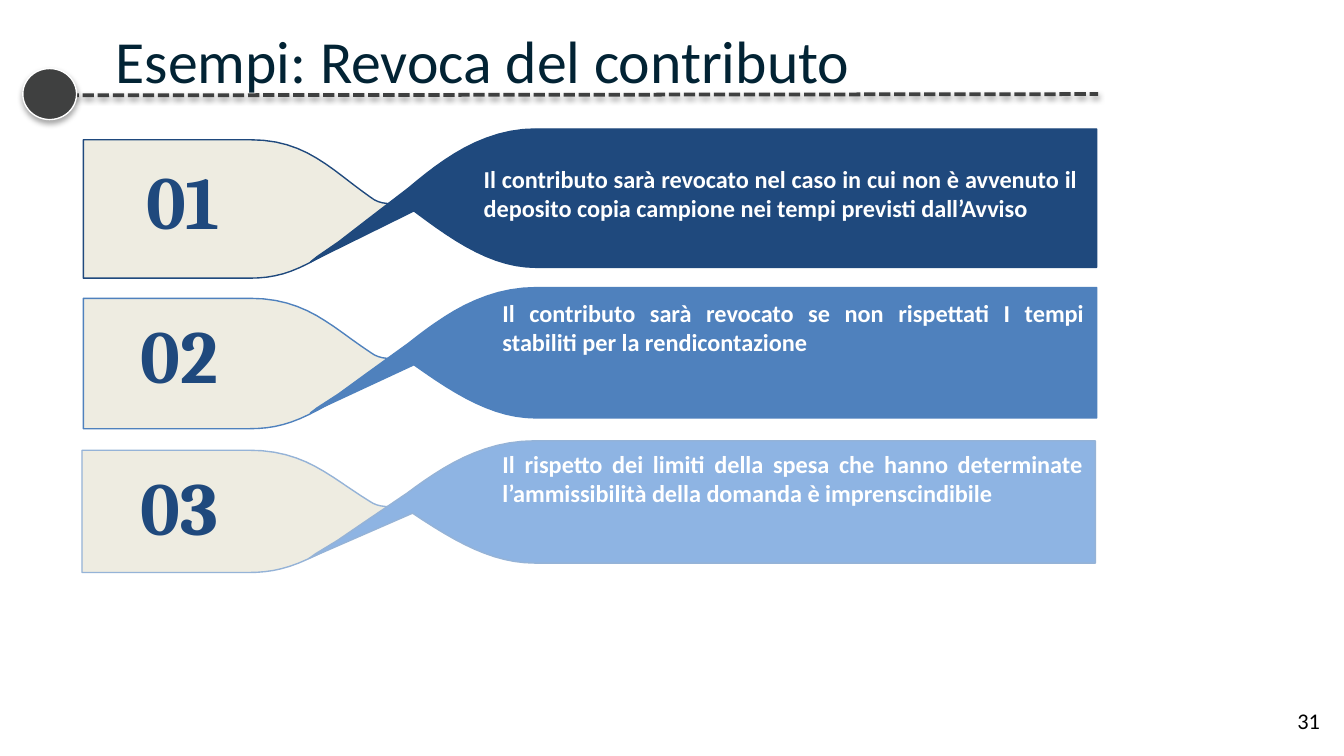
from lxml.etree import SubElement
from pptx import Presentation
from pptx.dml.color import RGBColor
from pptx.enum.dml import MSO_LINE
from pptx.enum.shapes import MSO_CONNECTOR, MSO_SHAPE
from pptx.enum.text import MSO_ANCHOR, MSO_AUTO_SIZE, PP_ALIGN
from pptx.oxml.ns import qn
from pptx.util import Pt

PX = 9144  # EMU per px, 100 px to the inch
COLORS = {
    "title": "022334", "rule": "3F4040", "white": "FFFFFF", "black": "000000",
    "cream": "EEECE1", "navy": "1F497D", "blue": "4F81BD",
    "sky": "8EB4E3", "sky_line": "95B3D7",
}


def curve(start, pull_start, pull_end, end, steps=12):
    """Return points along a cubic Bezier curve."""
    points = []
    for step in range(steps + 1):
        t = step / steps
        weights = ((1 - t) ** 3, 3 * t * (1 - t) ** 2, 3 * t * t * (1 - t), t ** 3)
        corners = (start, pull_start, pull_end, end)
        points.append(tuple(sum(w * corner[axis] for w, corner in zip(weights, corners))
                            for axis in (0, 1)))
    return points


# Ribbon outlines in px, drawn for a ribbon of OUTLINE_HEIGHT
OUTLINE_HEIGHT = 103
BAND_LEFT = 169
TAIL = [
    (0, 0),
    *curve((124, 0), (166, 0), (184, 22), (214, 43)),
    *curve((214, 43), (224, 51), (241, 48), (251, 36)),
    *curve((211, 64), (168, 95), (150, 103), (124, 103)),
    (0, 103),
]
BAND = [
    *curve((168, 0), (128, 0), (98, 23), (73, 44)),
    (43, 67), (21, 84), (5, 95), (0, 99),
    *curve((77, 61), (110, 86), (137, 103), (168, 103)),
    (585, 103), (585, 0),
]

# Row box (left, top, height), tail drop, colours, number box and text box
# (left, top, width, height inside the row), wording
ROWS = [
    ((62, 96, 103), 8, "navy", "navy", "01", (37, 14, 143, 77), (288, 21, 461, 54),
     "Il contributo sarà revocato nel caso in cui non è avvenuto il deposito "
     "copia campione nei tempi previsti dall’Avviso"),
    ((62, 214, 97), 8, "blue", "blue", "02", (33, 11, 152, 77), (302, 3, 452, 54),
     "Il contributo sarà revocato se non rispettati I tempi stabiliti per la "
     "rendicontazione"),
    ((61, 328, 91), 7, "sky", "sky_line", "03", (34, 10, 127, 77), (303, 1, 451, 54),
     "Il rispetto dei limiti della spesa che hanno determinate l’ammissibilità "
     "della domanda è imprenscindibile"),
]


def rgb(name):
    return RGBColor.from_string(COLORS[name])


def emu(*lengths):
    return [length * PX for length in lengths]


def add_shadow(shape, distance, opacity):
    """Give the shape a soft shadow that falls straight down."""
    properties = shape._element.spPr
    for old in properties.findall(qn("a:effectLst")):
        properties.remove(old)
    effects = SubElement(properties, qn("a:effectLst"))
    shadow = SubElement(effects, qn("a:outerShdw"), blurRad=str(Pt(3.1)),
                        dist=str(Pt(distance)), dir="5400000", rotWithShape="0")
    color = SubElement(shadow, qn("a:srgbClr"), val=COLORS["black"])
    SubElement(color, qn("a:alpha"), val=str(opacity * 1000))


def write(frame, text, size, color, font="Calibri", bold=False,
          align=PP_ALIGN.LEFT, anchor=MSO_ANCHOR.TOP, space_after=0):
    frame.word_wrap = True
    frame.auto_size = MSO_AUTO_SIZE.NONE
    frame.vertical_anchor = anchor
    para = frame.paragraphs[0]
    para.alignment = align
    para.space_after = Pt(space_after)
    span = para.add_run()
    span.text = text
    span.font.name = font
    span.font.size = Pt(size)
    span.font.bold = bold
    span.font.color.rgb = rgb(color)


def add_text(page, box, *args, **style):
    write(page.shapes.add_textbox(*emu(*box)).text_frame, *args, **style)


def add_header(page, left, top):
    rule = page.shapes.add_connector(
        MSO_CONNECTOR.STRAIGHT, *emu(left + 11, top + 58, left + 800, top + 57))
    rule.line.color.rgb = rgb("rule")
    rule.line.width = Pt(2)
    rule.line.dash_style = MSO_LINE.SQUARE_DOT
    add_shadow(rule, 1.6, 38)

    dot = page.shapes.add_shape(MSO_SHAPE.OVAL, *emu(left, top + 38, 40, 38))
    dot.fill.solid()
    dot.fill.fore_color.rgb = rgb("rule")
    dot.line.color.rgb = rgb("white")
    dot.line.width = Pt(0.75)
    add_shadow(dot, 1.8, 35)

    title = page.shapes.title
    title.left, title.top, title.width, title.height = emu(left + 59, top, 759, 64)
    write(title.text_frame, "Esempi: Revoca del contributo", 32, "title")
    rule._element.getparent().append(title._element)  # title in front of the rule


def add_outline(page, points, left, top, height, fill, line):
    stretch = height / OUTLINE_HEIGHT
    corners = [(x * PX, y * PX * stretch) for x, y in points]
    builder = page.shapes.build_freeform(*corners[0])
    builder.add_line_segments(corners[1:], close=True)
    shape = builder.convert_to_shape(*emu(left, top))
    shape.shadow.inherit = False
    shape.fill.solid()
    shape.fill.fore_color.rgb = rgb(fill)
    shape.line.color.rgb = rgb(line)
    shape.line.width = Pt(0.75)


def add_ribbon(page, box, drop, fill, line, number, number_box, text_box, text):
    left, top, height = box

    def inside(part):
        x, y, part_width, part_height = part
        return left + x, top + y, part_width, part_height

    add_outline(page, TAIL, left, top + drop, height, "cream", line)
    add_outline(page, BAND, left + BAND_LEFT, top, height, fill, line)
    add_text(page, inside(number_box), number, 40, "navy", font="Cambria", bold=True)
    add_text(page, inside(text_box), text, 13, "white", bold=True,
             align=PP_ALIGN.JUSTIFY, space_after=6)


def main():
    deck = Presentation()
    deck.slide_width = 1000 * PX
    deck.slide_height = deck.slide_width * 9 // 16
    page = deck.slides.add_slide(deck.slide_layouts[5])
    add_header(page, 17, 13)
    for row in ROWS:
        add_ribbon(page, *row)
    add_text(page, (857, 521, 135, 30), "31", 12, "black",
             align=PP_ALIGN.RIGHT, anchor=MSO_ANCHOR.MIDDLE)
    deck.save("out.pptx")


if __name__ == "__main__":
    main()
